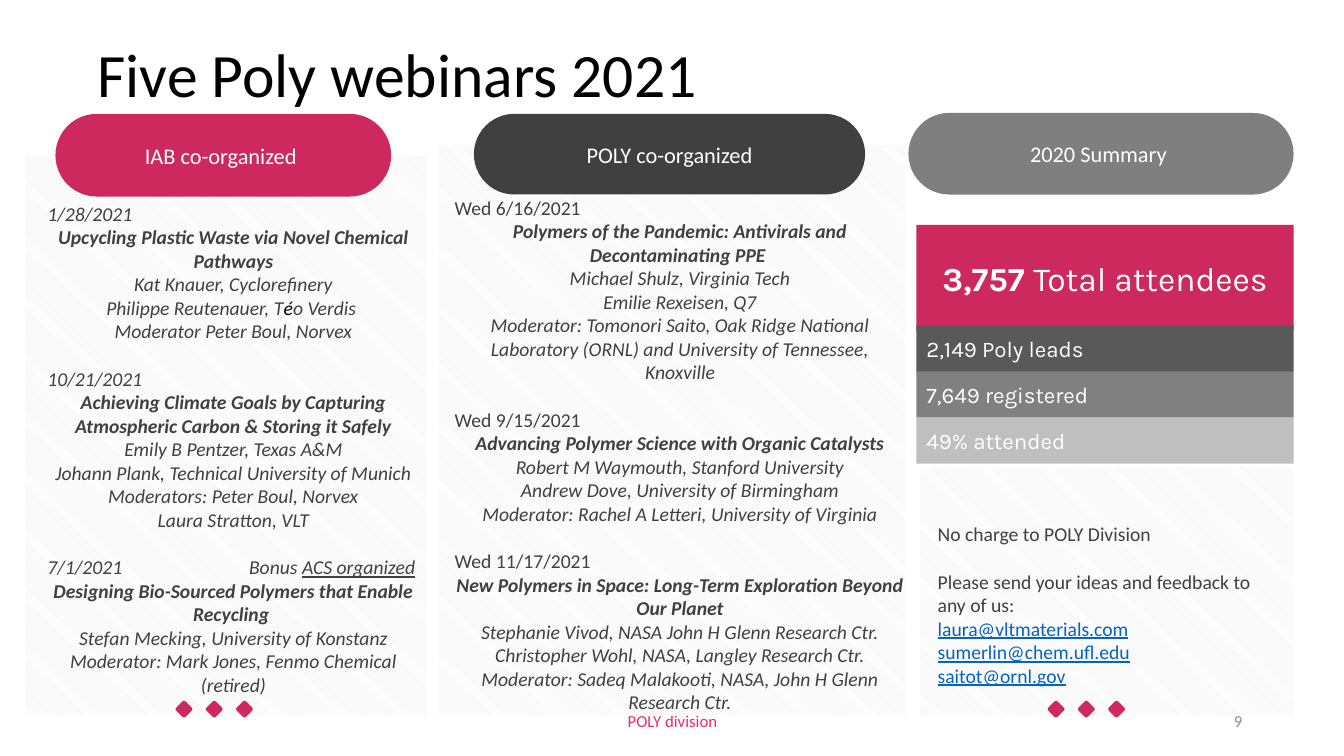
import lxml.etree
import pptx
import pptx.util
import pptx.dml.color
import pptx.enum.dml
import pptx.enum.shapes
import pptx.enum.text
import pptx.oxml.ns

RGBColor = pptx.dml.color.RGBColor
Inches = pptx.util.Inches
Pt = pptx.util.Pt
ALIGN = pptx.enum.text.PP_ALIGN
ANCHOR = pptx.enum.text.MSO_ANCHOR
SHAPE = pptx.enum.shapes.MSO_SHAPE

BLACK = RGBColor(0x00, 0x00, 0x00)
WHITE = RGBColor(0xFF, 0xFF, 0xFF)
CRIMSON = RGBColor(0xCE, 0x29, 0x5E)
PINK = RGBColor(0xE3, 0x2F, 0x74)
CHARCOAL = RGBColor(0x40, 0x40, 0x40)
SLATE = RGBColor(0x59, 0x59, 0x59)
GRAY = RGBColor(0x80, 0x80, 0x80)
PILL_GRAY = RGBColor(0x7F, 0x7F, 0x7F)
SILVER = RGBColor(0xBF, 0xBF, 0xBF)
NUMBER_GRAY = RGBColor(0x8C, 0x8C, 0x8C)
STRIPE = RGBColor(0xE7, 0xE6, 0xE6)
LINK_BLUE = RGBColor(0x05, 0x63, 0xC1)

# Each webinar: date runs, title, speaker lines; a run is (text, style changes)
IAB_WEBINARS = [
    ([("1/28/2021", {})],
     "Upcycling Plastic Waste via Novel Chemical Pathways",
     [[("Kat Knauer, Cyclorefinery", {})],
      [("Philippe Reutenauer, T", {}), ("é", {"color": BLACK}), ("o Verdis ", {})],
      [("Moderator Peter Boul, Norvex", {})]]),
    ([("10/21/2021", {})],
     "Achieving Climate Goals by Capturing Atmospheric Carbon & Storing it Safely",
     [[("Emily B Pentzer, Texas A&M", {})],
      [("Johann Plank, Technical University of Munich", {})],
      [("Moderators: Peter Boul, Norvex", {})],
      [("Laura Stratton, VLT", {})]]),
    ([("7/1/2021\tBonus ", {}), ("ACS organized", {"underline": True})],
     "Designing Bio-Sourced Polymers that Enable Recycling ",
     [[("Stefan Mecking, University of Konstanz Moderator: "
        "Mark Jones, Fenmo Chemical (retired)", {})]]),
]
POLY_WEBINARS = [
    ([("Wed 6/16/2021", {})],
     "Polymers of the Pandemic: Antivirals and Decontaminating PPE ",
     [[("Michael Shulz, Virginia Tech", {})],
      [("Emilie Rexeisen, Q7", {})],
      [("Moderator: Tomonori Saito, Oak Ridge National Laboratory (ORNL) "
        "and University of Tennessee, Knoxville", {})]]),
    ([("Wed 9/15/2021", {})],
     "Advancing Polymer Science with Organic Catalysts",
     [[("Robert M Waymouth, Stanford University", {})],
      [("Andrew Dove, University of Birmingham", {})],
      [("Moderator: Rachel A Letteri, University of Virginia", {})]]),
    ([("Wed 11/17/2021", {})],
     "New Polymers in Space: Long-Term Exploration Beyond Our Planet",
     [[("Stephanie Vivod, NASA John H Glenn Research Ctr.", {})],
      [("Christopher Wohl, NASA, Langley Research Ctr.", {})],
      [("Moderator: Sadeq Malakooti, NASA, John H Glenn Research Ctr.", {})]]),
]
CONTACT_NOTE = ["No charge to POLY Division",
                "Please send your ideas and feedback to any of us:"]
EMAILS = ["laura@vltmaterials.com", "sumerlin@chem.ufl.edu", "saitot@ornl.gov"]
ATTENDANCE = [("2,149 Poly leads", SLATE), ("7,649 registered", GRAY),
              ("49% attended", SILVER)]

# Panel and heading boxes: (left, top, width, height) in inches
PANEL_BOTTOM = 7.1
PANELS = [(0.25, 1.54, 3.98), (4.35, 1.44, 4.63), (9.12, 4.63, 3.71)]
HEADINGS = [("IAB co-organized ", CRIMSON, (0.55, 1.13, 3.33, 0.82)),
            ("POLY co-organized", CHARCOAL, (4.7, 1.13, 3.88, 0.8)),
            ("2020 Summary ", PILL_GRAY, (9.01, 1.12, 3.82, 0.81))]
PROGRAMS = [(IAB_WEBINARS, (0.47, 2, 3.69), True),
            (POLY_WEBINARS, (4.51, 1.94, 4.47), False)]
SUMMARY_LEFT, SUMMARY_WIDTH = 9.09, 3.74
BAR_TOP, BAR_PITCH, BAR_HEIGHT = 3.23, 0.455, 0.46
DIAMOND_ROWS, DIAMOND_TOP, DIAMOND_SIZE, DIAMOND_STEP = (1.76, 10.41), 6.97, 0.13, 0.3
BODY_SIZE, BLANK_LINE, BONUS_TAB = 14, 17, 2

deck = pptx.Presentation()
deck.slide_width, deck.slide_height = Inches(13.33), Inches(7.5)
slide = deck.slides.add_slide(deck.slide_layouts[6])


def add_words(paragraph, words, size=BODY_SIZE, color=CHARCOAL, font="Calibri",
              bold=False, italic=False, underline=False):
    run = paragraph.add_run()
    run.text = words
    run.font.size, run.font.name = Pt(size), font
    run.font.bold, run.font.italic, run.font.underline = bold, italic, underline
    run.font.color.rgb = color


def add_tab_stop(paragraph, position):
    qn = pptx.oxml.ns.qn
    properties = paragraph._p.get_or_add_pPr()
    stops = lxml.etree.SubElement(properties, qn("a:tabLst"))
    lxml.etree.SubElement(stops, qn("a:tab"), pos=str(Inches(position)), algn="l")


def add_block(kind, box, color=None):
    """Add a borderless shape, solid or, without a colour, striped."""
    block = slide.shapes.add_shape(kind, *map(Inches, box))
    block.shadow.inherit = False
    block.line.fill.background()
    if color is None:
        block.fill.patterned()
        block.fill.pattern = pptx.enum.dml.MSO_PATTERN.LIGHT_DOWNWARD_DIAGONAL
        block.fill.fore_color.rgb, block.fill.back_color.rgb = STRIPE, WHITE
    else:
        block.fill.solid()
        block.fill.fore_color.rgb = color
    return block


def add_frame(box, margin=0.0, anchor=ANCHOR.TOP):
    frame = slide.shapes.add_textbox(*map(Inches, box)).text_frame
    frame.word_wrap = True
    frame.vertical_anchor = anchor
    frame.margin_left = frame.margin_right = Inches(margin)
    frame.margin_top = frame.margin_bottom = Inches(margin / 2)
    return frame


def next_paragraph(frame, align=ALIGN.LEFT):
    first = frame.paragraphs[0]
    paragraph = frame.add_paragraph() if first.runs else first
    paragraph.alignment = align
    return paragraph


def add_label(block, words, align, **style):
    block.text_frame.word_wrap = True
    block.text_frame.vertical_anchor = ANCHOR.MIDDLE
    paragraph = next_paragraph(block.text_frame, align)
    add_words(paragraph, words, color=WHITE, **style)
    return paragraph


title = next_paragraph(add_frame((0.87, 0.04, 11.5, 1.45), 0.1, ANCHOR.MIDDLE))
title.line_spacing = 0.9
add_words(title, "Five Poly webinars 2021", 44, BLACK)

for words, color, box, align in [
        ("POLY division", PINK, (4.42, 6.95, 4.5, 0.4), ALIGN.CENTER),
        ("9", NUMBER_GRAY, (9.42, 6.95, 3, 0.4), ALIGN.RIGHT)]:
    add_words(next_paragraph(add_frame(box, 0.1, ANCHOR.MIDDLE), align), words, 12, color)

for (left, top, width), (words, color, heading_box) in zip(PANELS, HEADINGS):
    add_block(SHAPE.RECTANGLE, (left, top, width, PANEL_BOTTOM - top))
    heading = add_block(SHAPE.ROUNDED_RECTANGLE, heading_box, color)
    heading.adjustments[0] = 0.5
    add_label(heading, words, ALIGN.CENTER, size=16)

for webinars, (left, top, width), italic_dates in PROGRAMS:
    program = add_frame((left, top, width, PANEL_BOTTOM - top))
    for number, (date_runs, topic, speakers) in enumerate(webinars):
        date = next_paragraph(program)
        if number:
            date.space_before = Pt(BLANK_LINE)
        if len(date_runs) > 1:
            add_tab_stop(date, BONUS_TAB)
        for words, style in date_runs:
            add_words(date, words, italic=italic_dates, **style)
        add_words(next_paragraph(program, ALIGN.CENTER), topic, bold=True, italic=True)
        for speaker_runs in speakers:
            speaker = next_paragraph(program, ALIGN.CENTER)
            for words, style in speaker_runs:
                add_words(speaker, words, italic=True, **style)

contact = add_frame((9.3, 5.18, 3.36, PANEL_BOTTOM - 5.18))
for number, note in enumerate(CONTACT_NOTE):
    paragraph = next_paragraph(contact)
    if number:
        paragraph.space_before = Pt(BLANK_LINE)
    add_words(paragraph, note)
for email in EMAILS:
    add_words(next_paragraph(contact), email, color=LINK_BLUE, underline=True)

total = add_block(SHAPE.RECTANGLE, (SUMMARY_LEFT, 2.23, SUMMARY_WIDTH, 1.05), CRIMSON)
attendees = add_label(total, "3,757 ", ALIGN.CENTER, size=24, font="Karla", bold=True)
attendees.space_before = Pt(6)
add_words(attendees, "Total attendees", 24, WHITE, "Karla")
for row, (words, color) in enumerate(ATTENDANCE):
    bar = add_block(SHAPE.RECTANGLE, (SUMMARY_LEFT, BAR_TOP + row * BAR_PITCH,
                                      SUMMARY_WIDTH, BAR_HEIGHT), color)
    add_label(bar, words, ALIGN.LEFT, size=16, font="Karla")

for row_left in DIAMOND_ROWS:
    for step in range(3):
        diamond = add_block(SHAPE.ROUNDED_RECTANGLE,
                            (row_left + step * DIAMOND_STEP, DIAMOND_TOP,
                             DIAMOND_SIZE, DIAMOND_SIZE), CRIMSON)
        diamond.rotation = 315

deck.save("out.pptx")
